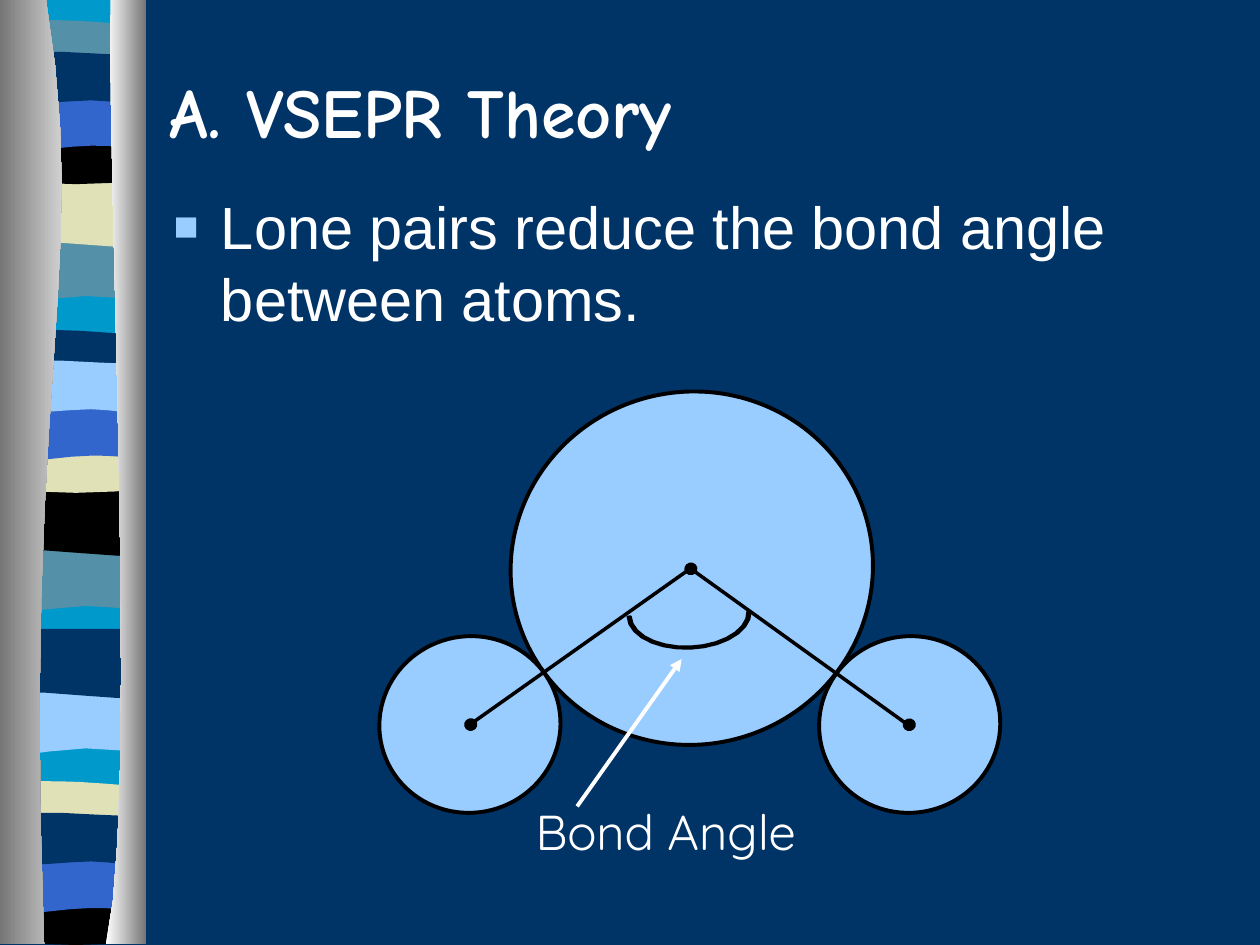
"""Build the VSEPR slide on lone pairs and the bond angle."""
import math
from dataclasses import dataclass
from typing import NamedTuple

import pptx
import pptx.dml.color
import pptx.enum.dml
import pptx.enum.shapes
import pptx.enum.text
import pptx.oxml
import pptx.oxml.ns
import pptx.util

Point = tuple[float, float]


@dataclass(frozen=True)
class Theme:
    navy: str = "003366"
    cyan: str = "0099CC"
    teal: str = "5490A8"
    cream: str = "E1E1B7"
    blue: str = "3366CC"
    sky: str = "99CCFF"
    black: str = "000000"
    white: str = "FFFFFF"
    shade: str = "767676"
    glint: str = "D0D0D0"
    title_font: str = "Comic Neue"
    body_font: str = "Arial"
    label_font: str = "Quicksand"
    title_size: float = 40
    body_size: float = 34
    label_size: float = 28


THEME = Theme()


class Wave(NamedTuple):
    height: float
    start: Point
    steps: list[tuple[Point, ...]]


class Band(NamedTuple):
    wave: Wave
    top: float
    color: str


class Circle(NamedTuple):
    left: float
    top: float
    width: float
    height: float
    color: str
    outline: float


class Segment(NamedTuple):
    begin: Point
    end: Point
    color: str
    weight: float
    arrow: bool = False


SWOOP = Wave(39.6, (78, 0), [((78, 34),), ((24, 28), (14, 39.6), (0, 34)), ((0, 0),)])
FLAT = Wave(39.6, (78, 0), [((78, 34),), ((65, 39.6), (24, 29.5), (0, 34)), ((0, 0),)])
RIBBON = Wave(24, (78, 3.5), [((78, 21),), ((65, 24), (14, 24), (0, 21)), ((0, 3.5),),
                              ((5, 0), (17, 0.7), (30, 0.7)), ((43, 0.7), (68, 3), (78, 3.5))])
DIP = Wave(27.4, (78, 0), [((78, 23),), ((65, 27), (14, 27), (0, 23)), ((0, 0),),
                           ((48, 3.6), (62, 0), (78, 0))])
BULGE = Wave(34, (78, 0), [((78, 34),), ((66, 30), (61, 30), (48, 30)),
                           ((35, 30), (12, 34), (0, 34)), ((0, 0),)])
SWAY = Wave(29.6, (78, 3.6), [((78, 26),), ((73, 29.5), (61, 26), (48, 26)),
                              ((35, 26), (8, 29.5), (0, 26)), ((0, 3.6),),
                              ((11, 0), (53, 3.6), (66, 3.6))])

BANDS = [
    Band(SWOOP, 133.2, THEME.teal), Band(FLAT, 101.5, THEME.cream),
    Band(RIBBON, 11.5, THEME.teal), Band(DIP, 77.8, THEME.black),
    Band(BULGE, 53.3, THEME.blue), Band(SWAY, 29.5, THEME.navy),
    Band(SWOOP, 310.3, THEME.teal), Band(FLAT, 278, THEME.black),
    Band(RIBBON, 188.6, THEME.navy), Band(DIP, 254.2, THEME.cream),
    Band(BULGE, 230.4, THEME.blue), Band(SWAY, 206, THEME.sky),
    Band(SWOOP, 391.7, THEME.sky), Band(FLAT, 359.3, THEME.navy),
    Band(RIBBON, 446.4, THEME.cream), Band(DIP, 512.6, THEME.black),
    Band(BULGE, 488.9, THEME.blue), Band(SWAY, 464.4, THEME.navy),
]

ATOMS = [Circle(291.6, 223.9, 207.4, 201.6, THEME.sky, 2.25)] + [
    Circle(left, 363.6, 103.7, 100.8, THEME.sky, 2.25) for left in (216.7, 468)]
NUCLEI = [Circle(left, top, 6.8, 6.5, THEME.black, 0.75)
          for left, top in ((265.6, 410.8), (391.4, 321.8), (516.2, 410.9))]
BONDS = [Segment((393.8, 325.4), (268.6, 414), THEME.black, 2),
         Segment((395.3, 325.4), (521.3, 416), THEME.black, 2)]
POINTER = Segment((329.8, 460.8), (389.5, 376.6), THEME.white, 2.25, True)


def rgb(color: str) -> pptx.dml.color.RGBColor:
    return pptx.dml.color.RGBColor.from_string(color)


def trace(start: Point, steps: list[tuple[Point, ...]], pieces: int) -> list[Point]:
    points = [start]
    for step in steps:
        if len(step) == 1:
            points.append(step[0])
            continue
        anchors = (points[-1], *step)
        for t in (i / pieces for i in range(1, pieces + 1)):
            weights = [math.comb(3, k) * t**k * (1 - t) ** (3 - k) for k in range(4)]
            points.append(tuple(sum(w * a[axis] for w, a in zip(weights, anchors))
                                for axis in (0, 1)))
    return points


def draw_outline(slide, points: list[Point], *colors: str, outline: float = 0) -> None:
    corners = [(pptx.util.Pt(x), pptx.util.Pt(y)) for x, y in points]
    builder = slide.shapes.build_freeform(*corners[0])
    builder.add_line_segments(corners[1:], close=True)
    area = builder.convert_to_shape()
    area.shadow.inherit = False
    if len(colors) == 2:
        area.fill.gradient()
        area.fill.gradient_angle = 0
        for stop, color in zip(area.fill.gradient_stops, colors):
            stop.color.rgb = rgb(color)
    else:
        area.fill.solid()
        area.fill.fore_color.rgb = rgb(colors[0])
    if outline:
        area.line.color.rgb = rgb(colors[0])
        area.line.width = pptx.util.Pt(outline)
    else:
        area.line.fill.background()


def draw_band(slide, band: Band) -> None:
    points = trace(band.wave.start, band.wave.steps, 4)
    low, high = min(y for _, y in points), max(y for _, y in points)
    stretch = band.wave.height / (high - low)
    draw_outline(slide, [(4 + x, band.top + (y - low) * stretch) for x, y in points], band.color)


def draw_circle(slide, circle: Circle) -> None:
    disc = slide.shapes.add_shape(pptx.enum.shapes.MSO_SHAPE.OVAL,
                                  *(pptx.util.Pt(length) for length in circle[:4]))
    disc.rotation = 345.6
    disc.shadow.inherit = False
    disc.fill.solid()
    disc.fill.fore_color.rgb = rgb(circle.color)
    disc.line.color.rgb = rgb(THEME.black)
    disc.line.width = pptx.util.Pt(circle.outline)


def draw_segment(slide, segment: Segment) -> None:
    stroke = slide.shapes.add_connector(
        pptx.enum.shapes.MSO_CONNECTOR.STRAIGHT,
        *(pptx.util.Pt(length) for length in segment.begin + segment.end))
    stroke.line.color.rgb = rgb(segment.color)
    stroke.line.width = pptx.util.Pt(segment.weight)
    if segment.arrow:
        head = pptx.oxml.parse_xml(f'<a:tailEnd {pptx.oxml.ns.nsdecls("a")} type="triangle"/>')
        stroke.line._get_or_add_ln().append(head)
    stroke._element.spPr.append(
        pptx.oxml.parse_xml(f'<a:effectLst {pptx.oxml.ns.nsdecls("a")}/>'))


def draw_angle_arc(slide) -> None:
    tilt = math.radians(-2.4)
    turns = [math.pi * i / 14 for i in range(15)]
    rim = [(35.3 * math.cos(a), 20 * math.sin(a)) for a in turns]
    rim += [(33.3 * math.cos(a), 18.6 * math.sin(a)) for a in reversed(turns)]
    draw_outline(slide, [(393.8 + x * math.cos(tilt) - y * math.sin(tilt),
                          350.8 + x * math.sin(tilt) + y * math.cos(tilt)) for x, y in rim],
                 THEME.black, outline=1)


def write(slide, text: str, box: tuple[float, ...], *, font: str, size: float,
          bold: bool = False, middle: bool = False, inset: float | None = None,
          bullet: bool = False) -> None:
    frame = slide.shapes.add_textbox(*(pptx.util.Pt(length) for length in box)).text_frame
    frame.word_wrap = True
    if middle:
        frame.vertical_anchor = pptx.enum.text.MSO_ANCHOR.MIDDLE
    if inset is not None:
        frame.margin_left = frame.margin_right = pptx.util.Pt(inset)
        frame.margin_top = frame.margin_bottom = pptx.util.Pt(inset)
    paragraph = frame.paragraphs[0]
    run = paragraph.add_run()
    run.text = text
    run.font.name, run.font.size, run.font.bold = font, pptx.util.Pt(size), bold
    run.font.color.rgb = rgb(THEME.white)
    if bullet:
        paragraph.space_before = pptx.util.Pt(size * 0.2)
        props = paragraph._p.get_or_add_pPr()
        props.set("marL", str(int(pptx.util.Pt(27))))
        props.set("indent", str(int(pptx.util.Pt(-27))))
        for mark in (f'<a:buClr {{}}><a:srgbClr val="{THEME.sky}"/></a:buClr>',
                     '<a:buSzPct {} val="70000"/>', '<a:buFont {} typeface="Arial"/>',
                     '<a:buChar {} char="■"/>'):
            props.append(pptx.oxml.parse_xml(mark.format(pptx.oxml.ns.nsdecls("a"))))


def main() -> None:
    deck = pptx.Presentation()
    deck.slide_width, deck.slide_height = pptx.util.Pt(720), pptx.util.Pt(540)
    slide = deck.slides.add_slide(deck.slide_layouts[6])
    slide.background.fill.solid()
    slide.background.fill.fore_color.rgb = rgb(THEME.navy)

    draw_outline(slide, [(4, 0), (82, 0), (82, 538), (4, 538)], THEME.cyan)
    for band in BANDS:
        draw_band(slide, band)
    left_edge = [((52, 155.5), (12.5, 213), (25.2, 539.5)), ((0, 539.5),), ((0, 0),)]
    right_edge = [((60.5, 90), (79.9, 465), (60.5, 539.5)), ((83.5, 539.5),), ((83.5, 0),)]
    draw_outline(slide, trace((26.3, 0), left_edge, 12), THEME.shade, THEME.glint)
    draw_outline(slide, trace((63.4, 0), right_edge, 12), THEME.white, THEME.shade)

    write(slide, "A. VSEPR Theory", (90, 18, 630, 90), font=THEME.title_font,
          size=THEME.title_size, bold=True, middle=True)
    write(slide, "Lone pairs reduce the bond angle between atoms.", (92.2, 105.1, 612, 185.8),
          font=THEME.body_font, size=THEME.body_size, bullet=True)
    write(slide, "Bond Angle", (305.3, 457.2, 176.4, 30.2), font=THEME.label_font,
          size=THEME.label_size, inset=0.7)

    for circle in ATOMS + NUCLEI:
        draw_circle(slide, circle)
    for bond in BONDS:
        draw_segment(slide, bond)
    draw_angle_arc(slide)
    draw_segment(slide, POINTER)
    deck.save("out.pptx")


if __name__ == "__main__":
    main()
